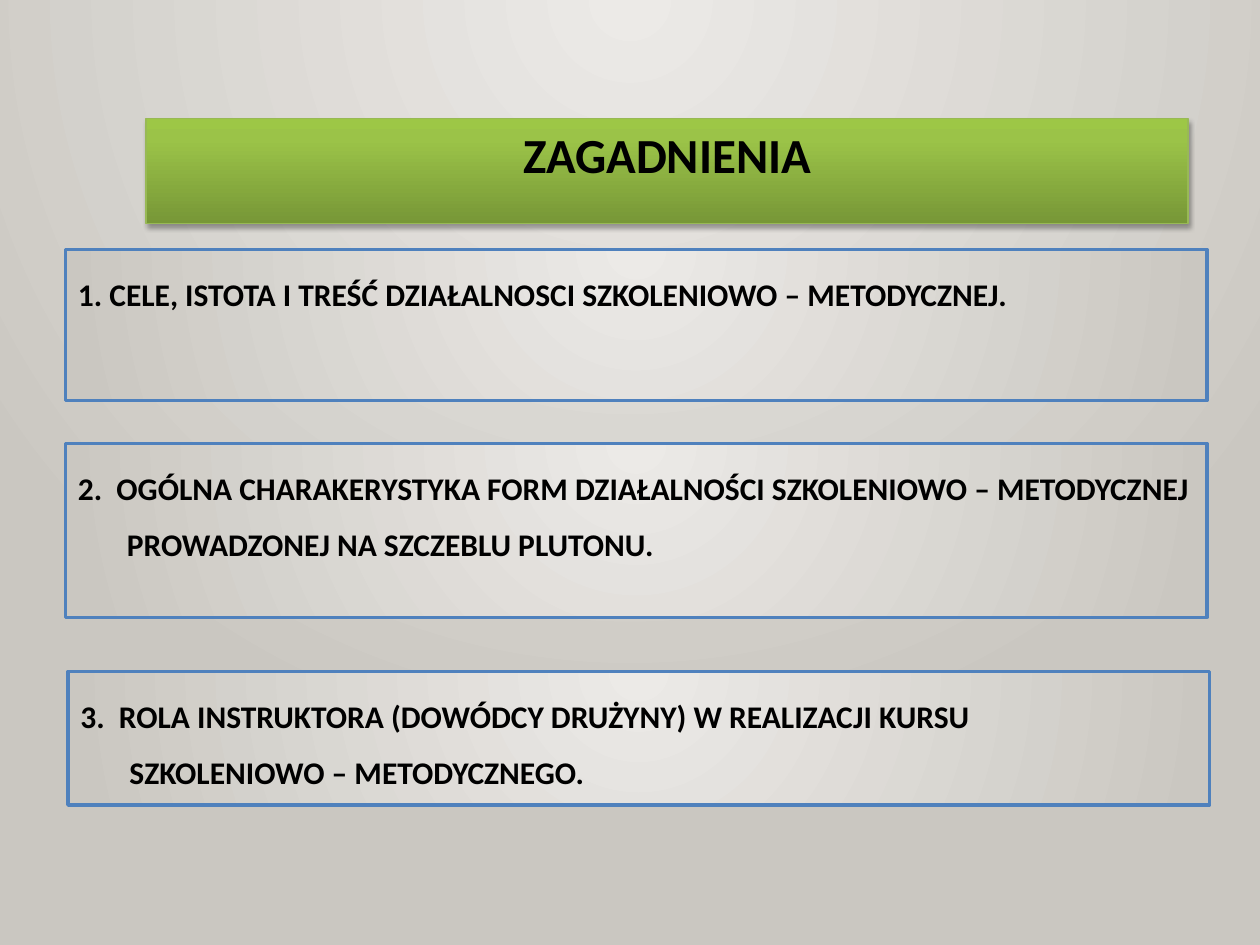
from dataclasses import dataclass

from pptx import Presentation
from pptx.dml.color import RGBColor
from pptx.enum.shapes import MSO_SHAPE as Shape
from pptx.enum.text import MSO_ANCHOR as Anchor, MSO_AUTO_SIZE as AutoSize, PP_ALIGN as Align
from pptx.oxml import parse_xml
from pptx.oxml.ns import nsdecls, qn
from pptx.util import Pt


@dataclass(frozen=True)
class Theme:
    font: str = "Calibri"
    title_size: int = 28
    item_size: int = 18
    text: str = "000000"
    item_line: str = "4F81BD"
    title_line: str = "98B955"
    stone: tuple = ((0, "ECEAE7"), (100, "CAC7C1"))
    green: tuple = ((0, "779737"), (80, "9BC348"), (100, "9DC746"))


THEME = Theme()
RADIAL = '<a:path path="circle"><a:fillToRect l="43000" t="0" r="43000" b="100000"/></a:path>'
UPWARD = '<a:lin ang="16200000" scaled="0"/>'
HANGING = Pt(28)

# left, top, width, height in points
TITLE_BOX = (83.52, 67.68, 595.44, 41.04)
ITEMS = [
    ("1. CELE, ISTOTA I TREŚĆ DZIAŁALNOSCI SZKOLENIOWO – METODYCZNEJ.",
     (37.44, 142.56, 652.32, 86.4)),
    ("2.  OGÓLNA CHARAKERYSTYKA FORM DZIAŁALNOŚCI SZKOLENIOWO – METODYCZNEJ "
     "PROWADZONEJ NA SZCZEBLU PLUTONU.",
     (37.44, 253.44, 652.32, 99.36)),
    ("3.  ROLA INSTRUKTORA (DOWÓDCY DRUŻYNY) W REALIZACJI KURSU\v"
     "SZKOLENIOWO – METODYCZNEGO.",
     (38.88, 383.76, 652.32, 76.32)),
]


def apply(target, values):
    for name, value in values.items():
        setattr(target, name, value)


def paint_gradient(fill, properties, stops, direction):
    """Swap the solid fill inside a properties element for a gradient."""
    fill.solid()
    stop_xml = "".join(
        f'<a:gs pos="{position * 1000}"><a:srgbClr val="{colour}"/></a:gs>'
        for position, colour in stops)
    gradient = parse_xml(
        f'<a:gradFill {nsdecls("a")} rotWithShape="1">'
        f'<a:gsLst>{stop_xml}</a:gsLst>{direction}</a:gradFill>')
    properties.replace(properties.find(qn("a:solidFill")), gradient)


def outline(shape, colour, width):
    shape.line.color.rgb = RGBColor.from_string(colour)
    shape.line.width = Pt(width)


def write(shape, text, size, frame_format, paragraph_format):
    frame = shape.text_frame
    frame.text = text
    apply(frame, {"word_wrap": True, **frame_format})
    paragraph = frame.paragraphs[0]
    apply(paragraph, paragraph_format)
    for run in paragraph.runs:
        apply(run.font, {"name": THEME.font, "size": Pt(size), "bold": True})
        run.font.color.rgb = RGBColor.from_string(THEME.text)


def drop_shadow(shape):
    shape.shadow.inherit = False
    effects = shape.element.spPr.find(qn("a:effectLst"))
    effects.append(parse_xml(
        f'<a:outerShdw {nsdecls("a")} blurRad="{Pt(3.1)}" dist="{Pt(1.8)}" '
        'dir="5400000" rotWithShape="0"><a:srgbClr val="000000">'
        '<a:alpha val="35000"/></a:srgbClr></a:outerShdw>'))


def add_background(slide):
    fill = slide.background.fill
    properties = slide.element.find(f".//{qn('p:bgPr')}")
    paint_gradient(fill, properties, THEME.stone, RADIAL)


def add_title(slide, text):
    title = slide.shapes.title
    apply(title, dict(zip(("left", "top", "width", "height"), map(Pt, TITLE_BOX))))
    paint_gradient(title.fill, title.element.spPr, THEME.green, UPWARD)
    outline(title, THEME.title_line, 0.75)
    drop_shadow(title)
    write(title, text, THEME.title_size,
          {"auto_size": AutoSize.SHAPE_TO_FIT_TEXT, "vertical_anchor": Anchor.TOP},
          {"alignment": Align.CENTER})


def add_item(slide, text, box):
    item = slide.shapes.add_shape(Shape.RECTANGLE, *map(Pt, box))
    item.shadow.inherit = False
    paint_gradient(item.fill, item.element.spPr, THEME.stone, RADIAL)
    outline(item, THEME.item_line, 2)
    write(item, text, THEME.item_size, {"vertical_anchor": Anchor.TOP},
          {"alignment": Align.LEFT, "line_spacing": 1.5})
    indents = item.text_frame.paragraphs[0]._p.get_or_add_pPr()
    indents.set("marL", str(HANGING))
    indents.set("indent", str(-HANGING))


def main():
    deck = Presentation()
    apply(deck, {"slide_width": Pt(720), "slide_height": Pt(540)})
    slide = deck.slides.add_slide(deck.slide_layouts.get_by_name("Title Only"))
    add_background(slide)
    add_title(slide, "ZAGADNIENIA")
    for text, box in ITEMS:
        add_item(slide, text, box)
    deck.save("out.pptx")


if __name__ == "__main__":
    main()
